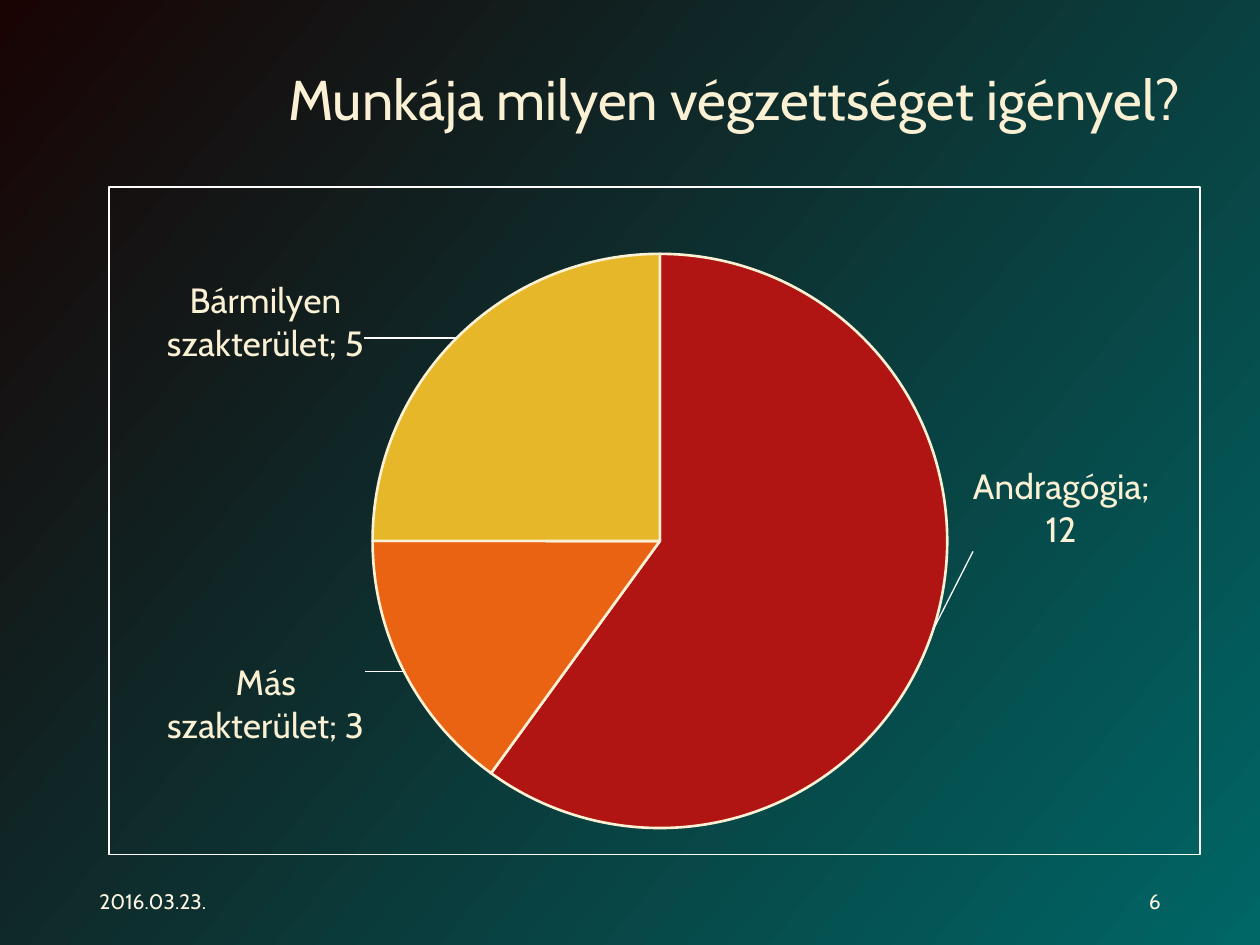
"""Build a slide with a pie chart of the qualifications that jobs require."""
from dataclasses import dataclass

from lxml.etree import SubElement
from pptx import Presentation
from pptx.chart.chart import Chart
from pptx.chart.data import CategoryChartData
from pptx.dml.color import RGBColor
from pptx.enum.chart import XL_CHART_TYPE, XL_LABEL_POSITION
from pptx.enum.text import MSO_ANCHOR, PP_ALIGN
from pptx.oxml import parse_xml
from pptx.oxml.ns import nsdecls, qn
from pptx.slide import Slide
from pptx.util import Inches, Pt


@dataclass(frozen=True)
class Theme:
    """Colours, font and type sizes of the slide."""
    font: str = "Cabin"
    text: str = "FAF1D4"
    footer: str = "FBF4E0"
    border: str = "FEFDF9"
    gradient: tuple[str, str] = ("190303", "006666")
    title_size: int = 32
    label_size: int = 20
    footer_size: int = 12


@dataclass(frozen=True)
class Slice:
    """One pie slice with its label offset as a share of the chart."""
    category: str
    value: int
    color: str
    label_offset: tuple[float, float]


@dataclass(frozen=True)
class Footer:
    """One footer text with its left edge and alignment."""
    text: str
    left: float
    alignment: PP_ALIGN


THEME = Theme()
SLICES = (
    Slice("Andragógia", 12, "B01513", (0.03, -0.25)),
    Slice("Más szakterület", 3, "EA6312", (-0.03, -0.02)),
    Slice("Bármilyen szakterület", 5, "E6B729", (-0.08, 0.05)),
)
FOOTERS = (
    Footer("2016.03.23.", 0.69, PP_ALIGN.LEFT),
    Footer("6", 7.06, PP_ALIGN.RIGHT),
)
PLOT_LAYOUT = {"layoutTarget": "inner", "xMode": "edge", "yMode": "edge",
               "x": 0.24, "y": 0.1, "w": 0.53, "h": 0.86}


def style_font(font, size: int, color: str) -> None:
    """Apply the theme font in a size and colour."""
    font.name = THEME.font
    font.size = Pt(size)
    font.color.rgb = RGBColor.from_string(color)


def set_layout(parent, index: int, settings: dict) -> None:
    """Give a chart element a manual layout."""
    for existing in parent.findall(qn("c:layout")):
        parent.remove(existing)
    layout = parse_xml(f"<c:layout {nsdecls('c')}><c:manualLayout/></c:layout>")
    for name, value in settings.items():
        SubElement(layout[0], qn(f"c:{name}")).set("val", str(value))
    parent.insert(index, layout)


def outline_properties():
    """Return unfilled shape properties with a thin border."""
    return parse_xml(
        f'<c:spPr {nsdecls("c", "a")}><a:noFill/><a:ln w="{Pt(0.75)}"><a:solidFill>'
        f'<a:srgbClr val="{THEME.border}"/></a:solidFill></a:ln></c:spPr>')


def set_background(slide: Slide) -> None:
    """Fill the background with the diagonal gradient."""
    fill = slide.background.fill
    fill.gradient()
    fill.gradient_angle = 320
    for stop, color in zip(fill.gradient_stops, THEME.gradient):
        stop.color.rgb = RGBColor.from_string(color)


def add_title(slide: Slide, text: str) -> None:
    """Place and format the title."""
    title = slide.shapes.title
    title.left, title.top = Inches(0.47), Inches(0.31)
    title.width, title.height = Inches(9), Inches(1.01)
    title.text_frame.text = text
    title.text_frame.vertical_anchor = MSO_ANCHOR.MIDDLE
    paragraph = title.text_frame.paragraphs[0]
    paragraph.alignment = PP_ALIGN.RIGHT
    paragraph.line_spacing = 0.9
    style_font(paragraph.font, THEME.title_size, THEME.text)


def add_footer(slide: Slide, footer: Footer) -> None:
    """Add one footer text box."""
    box = slide.shapes.add_textbox(
        Inches(footer.left), Inches(6.95), Inches(2.25), Inches(0.4))
    frame = box.text_frame
    frame.word_wrap = True
    frame.vertical_anchor = MSO_ANCHOR.MIDDLE
    frame.text = footer.text
    paragraph = frame.paragraphs[0]
    paragraph.alignment = footer.alignment
    style_font(paragraph.font, THEME.footer_size, THEME.footer)


def style_labels(chart: Chart) -> None:
    """Show category and value beside each slice with leader lines."""
    series = chart.plots[0].series[0]
    labels = series.data_labels
    labels.show_value = labels.show_category_name = True
    labels.number_format = "###0"
    labels.number_format_is_linked = False
    labels.position = XL_LABEL_POSITION.OUTSIDE_END
    style_font(labels.font, THEME.label_size, THEME.text)
    for index in range(len(SLICES)):
        label = series.points[index].data_label
        label.position = XL_LABEL_POSITION.OUTSIDE_END
        style_font(label.font, THEME.label_size, THEME.text)
    for element, part in zip(chart.element.iter(qn("c:dLbl")), SLICES):
        set_layout(element, 1, dict(zip("xy", part.label_offset)))
        element.find(qn("c:showCatName")).set("val", "1")
        SubElement(element, qn("c:separator")).text = "; "
    group = next(chart.element.iter(qn("c:dLbls")))
    for existing in group.findall(qn("c:showLeaderLines")):
        group.remove(existing)
    SubElement(group, qn("c:separator")).text = "; "
    SubElement(group, qn("c:showLeaderLines")).set("val", "1")
    SubElement(group, qn("c:leaderLines")).append(outline_properties())


def add_pie(slide: Slide) -> None:
    """Add the bordered pie chart."""
    data = CategoryChartData(number_format="###0")
    data.categories = [part.category for part in SLICES]
    data.add_series("Series 1", [part.value for part in SLICES])
    chart = slide.shapes.add_chart(
        XL_CHART_TYPE.PIE, Inches(0.86), Inches(1.48), Inches(8.67), Inches(5.31), data).chart
    chart.has_title = chart.has_legend = False
    style_font(chart.font, THEME.label_size, THEME.text)
    plot = chart.plots[0]
    plot.vary_by_categories = True
    for index, part in enumerate(SLICES):
        point_format = plot.series[0].points[index].format
        point_format.fill.solid()
        point_format.fill.fore_color.rgb = RGBColor.from_string(part.color)
        point_format.line.color.rgb = RGBColor.from_string(THEME.text)
        point_format.line.width = Pt(1.5)
    style_labels(chart)
    chart_element = chart.element.find(qn("c:chart"))
    set_layout(chart_element.find(qn("c:plotArea")), 0, PLOT_LAYOUT)
    chart_element.addnext(outline_properties())


def main() -> None:
    """Build and save the presentation."""
    presentation = Presentation()
    presentation.slide_width, presentation.slide_height = Inches(10), Inches(7.5)
    slide = presentation.slides.add_slide(presentation.slide_layouts[5])
    set_background(slide)
    add_title(slide, "Munkája milyen végzettséget igényel?")
    for footer in FOOTERS:
        add_footer(slide, footer)
    add_pie(slide)
    presentation.save("out.pptx")


if __name__ == "__main__":
    main()
